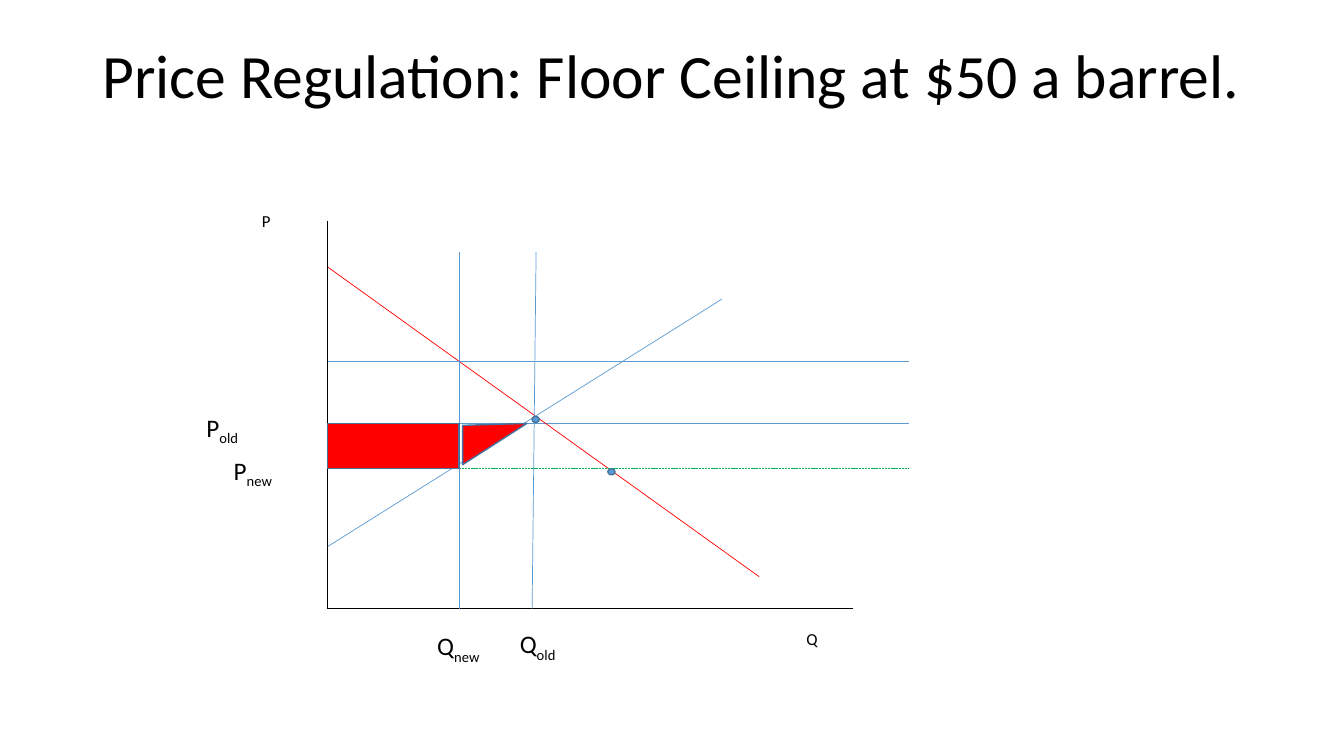
import pptx
import pptx.util
import pptx.dml.color
import pptx.enum.dml
import pptx.enum.shapes
import pptx.enum.text
import pptx.oxml.ns
from lxml import etree

Cm, Pt = pptx.util.Cm, pptx.util.Pt
SHAPE = pptx.enum.shapes.MSO_SHAPE
BLACK, RED, BLUE, GREEN, OUTLINE = "000000", "FF0000", "5B9BD5", "00B050", "43739E"


def color(hex_string):
    return pptx.dml.color.RGBColor.from_string(hex_string)


def apply(target, formats):
    for attribute, value in formats.items():
        setattr(target, attribute, value)


def add_text(slide, left, top, width, height, text, size, subscript="", spacing=1.0):
    box = slide.shapes.add_textbox(Cm(left), Cm(top), Cm(width), Cm(height))
    apply(box.text_frame, {"word_wrap": True,
                           "vertical_anchor": pptx.enum.text.MSO_ANCHOR.TOP})
    paragraph = box.text_frame.paragraphs[0]
    paragraph.line_spacing = spacing
    for part, baseline in ((text, 0), (subscript, -25000)):
        if part:
            run = paragraph.add_run()
            run.text = part
            apply(run.font, {"name": "Calibri", "size": Pt(size)})
            run.font.color.rgb = color(BLACK)
            if baseline:
                run.font._element.set("baseline", str(baseline))


def add_line(slide, start, end, stroke, dash=None):
    line = slide.shapes.add_connector(
        pptx.enum.shapes.MSO_CONNECTOR.STRAIGHT,
        *(Cm(value) for value in (*start, *end)))
    line.line.color.rgb = color(stroke)
    apply(line.line, {"width": Pt(0.5), "dash_style": dash})
    etree.SubElement(line._element.spPr, pptx.oxml.ns.qn("a:effectLst"))


def paint(shape, fill):
    shape.shadow.inherit = False
    shape.fill.solid()
    shape.fill.fore_color.rgb = color(fill)
    shape.line.color.rgb = color(OUTLINE)
    shape.line.width = Pt(1)


def draw_title(slide, left, top, width, height):
    add_text(slide, left, top, width, height,
             "Price Regulation: Floor Ceiling at $50 a barrel.", 44, spacing=0.9)


def draw_market(slide, left, top, width, height):
    def at(x, y):
        return left + x, top + y

    price_high, price_old, price_new = 3.54, 5.11, 6.25
    quantity_new = 3.31
    guide_top = 0.79

    # Price guides, axes, demand, supply and quantity guides
    lines = [
        ((0, price_old), (width, price_old), BLUE),
        ((0, 0), (0, height), BLACK),
        ((0, height), (13.23, height), BLACK),
        ((0, 1.17), (10.87, 8.97), RED),
        ((0, 8.21), (9.93, 1.98), BLUE),
        ((0, price_new), (width, price_new), GREEN,
         pptx.enum.dml.MSO_LINE.SQUARE_DOT),
        ((quantity_new, guide_top), (quantity_new, height), BLUE),
        ((0, price_high), (width, price_high), BLUE),
        ((5.25, guide_top), (5.15, height), BLUE),
    ]
    for start, end, *style in lines:
        add_line(slide, at(*start), at(*end), *style)

    # Market points
    dot_width, dot_height = 0.18, 0.15
    for x, y in ((7.15, 6.33), (5.24, 5.01)):
        dot_left, dot_top = at(x - dot_width / 2, y - dot_height / 2)
        dot = slide.shapes.add_shape(SHAPE.OVAL, Cm(dot_left), Cm(dot_top),
                                     Cm(dot_width), Cm(dot_height))
        paint(dot, BLUE)

    # Surplus transferred from producers
    transfer_left, transfer_top = at(0, price_old)
    transfer = slide.shapes.add_shape(
        SHAPE.RECTANGLE, Cm(transfer_left), Cm(transfer_top),
        Cm(quantity_new), Cm(price_new - price_old))
    paint(transfer, RED)

    # Surplus lost
    corners = [tuple(Cm(value) for value in at(*corner))
               for corner in ((3.4, 6.15), (3.4, 5.16), (5.02, price_old))]
    outline = slide.shapes.build_freeform(*corners[0])
    outline.add_line_segments(corners[1:], close=True)
    paint(outline.convert_to_shape(), RED)

    # Axis, price and quantity labels
    labels = [
        (-1.91, -0.38, 1.42, "P", 12),
        (11.81, 10.16, 2.39, "Q", 12),
        (-3.31, 4.7, 3.12, "P", 18, "old"),
        (-2.62, 5.79, 2.26, "P", 18, "new"),
        (2.51, 10.21, 1.73, "Q", 18, "new"),
        (4.59, 10.16, 1.65, "Q", 18, "old"),
    ]
    for x, y, label_width, *wording in labels:
        add_text(slide, *at(x, y), label_width, 1.02, *wording)


def main():
    presentation = pptx.Presentation()
    apply(presentation, {"slide_width": Cm(33.87), "slide_height": Cm(19.05)})
    slide = presentation.slides.add_slide(presentation.slide_layouts[6])
    draw_title(slide, 2.33, 1.01, 29.21, 3.68)
    draw_market(slide, 8.26, 5.56, 14.65, 9.78)
    presentation.save("out.pptx")


if __name__ == "__main__":
    main()
